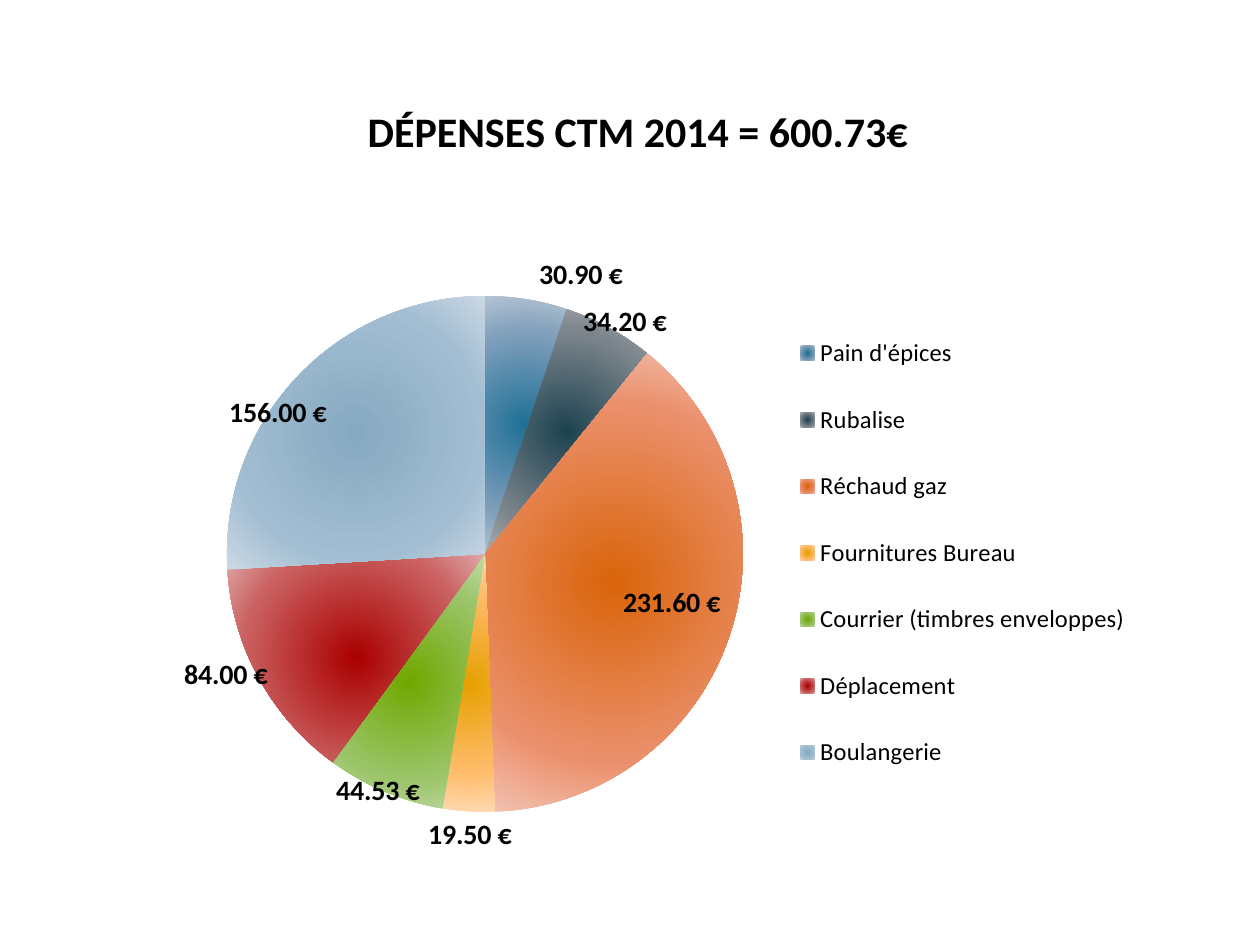
from dataclasses import dataclass
from itertools import accumulate
from math import cos, pi, sin

from pptx import Presentation
from pptx.chart.data import CategoryChartData
from pptx.dml.color import RGBColor
from pptx.enum.chart import XL_CHART_TYPE, XL_LABEL_POSITION, XL_LEGEND_POSITION
from pptx.oxml import parse_xml
from pptx.oxml.ns import nsdecls
from pptx.util import Emu, Pt

PX = 914400 // 126  # EMU in one px


@dataclass(frozen=True)
class Theme:
    font: str = "Calibri"
    text: RGBColor = RGBColor(0, 0, 0)
    title_size: int = 24
    label_size: int = 16
    legend_size: int = 14


@dataclass(frozen=True)
class Box:
    left: int
    top: int
    width: int
    height: int


@dataclass(frozen=True)
class Expense:
    name: str
    amount: float
    colours: tuple  # slice colour at core, middle and rim
    label_at: tuple  # centre of the label, px within the chart


THEME = Theme()
CHART = Box(118, 64, 1023, 892)
# Parts of the chart, in px within it
TITLE = Box(242, 31, 540, 51)
PIE = Box(109, 232, 516, 516)
LEGEND = Box(672, 238, 345, 502)

EXPENSES = [
    Expense("Pain d'épices", 30.90, ("1F7096", "7F9FBB", "B4C4D2"), (463, 211)),
    Expense("Rubalise", 34.20, ("1D4250", "7C858C", "A9AFB4"), (507, 258)),
    Expense("Réchaud gaz", 231.60, ("D9640A", "EB906C", "F3C4B4"), (554, 539)),
    Expense("Fournitures Bureau", 19.50, ("E6A000", "FFBC6B", "FFD9B0"), (352, 772)),
    Expense("Courrier (timbres enveloppes)", 44.53, ("70A800", "9DC56C", "C2DCA8"), (260, 727)),
    Expense("Déplacement", 84.00, ("AA0000", "CA6060", "DFAAAA"), (108, 611)),
    Expense("Boulangerie", 156.00, ("86A9C0", "A3BED3", "CBD9E4"), (160, 349)),
]


def style_font(font, size, bold=False):
    font.name = THEME.font
    font.size = Pt(size)
    font.bold = bold
    font.color.rgb = THEME.text


def manual_layout(x, y, width=None, height=None, edge=True, inner=False):
    """Layout element; lengths are px within the chart."""
    parts = ['<c:layoutTarget val="inner"/>'] if inner else []
    if edge:
        parts += ['<c:xMode val="edge"/>', '<c:yMode val="edge"/>']
    lengths = {"x": (x, CHART.width), "y": (y, CHART.height),
               "w": (width, CHART.width), "h": (height, CHART.height)}
    parts += [f'<c:{tag} val="{length / whole:.4f}"/>'
              for tag, (length, whole) in lengths.items() if length is not None]
    return parse_xml(f'<c:layout {nsdecls("c")}><c:manualLayout>'
                     f'{"".join(parts)}</c:manualLayout></c:layout>')


def place_after(parent, previous_tag, layout):
    """Give a chart part its layout, right after the named child."""
    for old in parent.xpath("c:layout"):
        parent.remove(old)
    parent.xpath(previous_tag)[0].addnext(layout)


def radial_fill(point, colours):
    point.format.line.fill.background()
    stops = "".join(f'<a:gs pos="{pos}"><a:srgbClr val="{colour}"/></a:gs>'
                    for pos, colour in zip((0, 68000, 100000), colours))
    fill = parse_xml(
        f'<a:gradFill {nsdecls("a")} rotWithShape="1"><a:gsLst>{stops}</a:gsLst>'
        '<a:path path="circle"><a:fillToRect l="50000" t="50000" r="50000" b="50000"/>'
        '</a:path></a:gradFill>')
    point.format.line._get_or_add_ln().addprevious(fill)


def add_title(chart, words):
    chart.has_title = True
    span = chart.chart_title.text_frame.paragraphs[0].add_run()
    span.text = words
    style_font(span.font, THEME.title_size, True)
    chart.chart_title.include_in_layout = False
    place_after(chart.chart_title._element, "c:tx", manual_layout(TITLE.left, TITLE.top))


def add_legend(chart):
    chart.has_legend = True
    legend = chart.legend
    legend.position = XL_LEGEND_POSITION.RIGHT
    legend.include_in_layout = False
    style_font(legend.font, THEME.legend_size)
    place_after(legend._element, "c:legendPos",
                manual_layout(LEGEND.left, LEGEND.top, LEGEND.width, LEGEND.height))


def format_slices(series):
    labels = series.data_labels
    labels.show_value = True
    labels.number_format = '#,##0.00 "€"'
    labels.number_format_is_linked = False
    labels.position = XL_LABEL_POSITION.CENTER
    style_font(labels.font, THEME.label_size, True)

    radius = PIE.width / 2
    ends = list(accumulate(item.amount for item in EXPENSES))
    for index, (item, end) in enumerate(zip(EXPENSES, ends)):
        point = series.points[index]
        radial_fill(point, item.colours)
        # Shift the label from the middle of its slice
        angle = 2 * pi * (end - item.amount / 2) / ends[-1]
        middle_x = PIE.left + radius + radius / 2 * sin(angle)
        middle_y = PIE.top + radius - radius / 2 * cos(angle)
        label = point.data_label
        style_font(label.font, THEME.label_size, True)
        label.position = XL_LABEL_POSITION.CENTER
        shift = manual_layout(item.label_at[0] - middle_x,
                              item.label_at[1] - middle_y, edge=False)
        place_after(series._element.xpath(f"c:dLbls/c:dLbl[c:idx/@val={index}]")[0],
                    "c:idx", shift)
    for leader in series._element.xpath("c:dLbls/c:showLeaderLines"):
        leader.set("val", "0")


def add_expense_chart(page, box):
    data = CategoryChartData(number_format='#,##0.00 "€"')
    data.categories = [item.name for item in EXPENSES]
    data.add_series("Dépenses", [item.amount for item in EXPENSES])
    frame = page.shapes.add_chart(
        XL_CHART_TYPE.PIE, *(Emu(length * PX) for length in
                             (box.left, box.top, box.width, box.height)), data)
    chart = frame.chart
    style_font(chart.font, 10)
    add_title(chart, "DÉPENSES CTM 2014 = 600.73€")
    add_legend(chart)
    plot_area = chart._chartSpace.xpath("c:chart/c:plotArea")[0]
    for old in plot_area.xpath("c:layout"):
        plot_area.remove(old)
    plot_area.insert(0, manual_layout(PIE.left, PIE.top, PIE.width, PIE.height, inner=True))
    chart.plots[0].vary_by_categories = True
    format_slices(chart.plots[0].series[0])


def main():
    deck = Presentation()
    deck.slide_width = Emu(1260 * PX)
    deck.slide_height = Emu(945 * PX)
    page = deck.slides.add_slide(deck.slide_layouts[6])
    add_expense_chart(page, CHART)
    deck.save("out.pptx")


if __name__ == "__main__":
    main()
